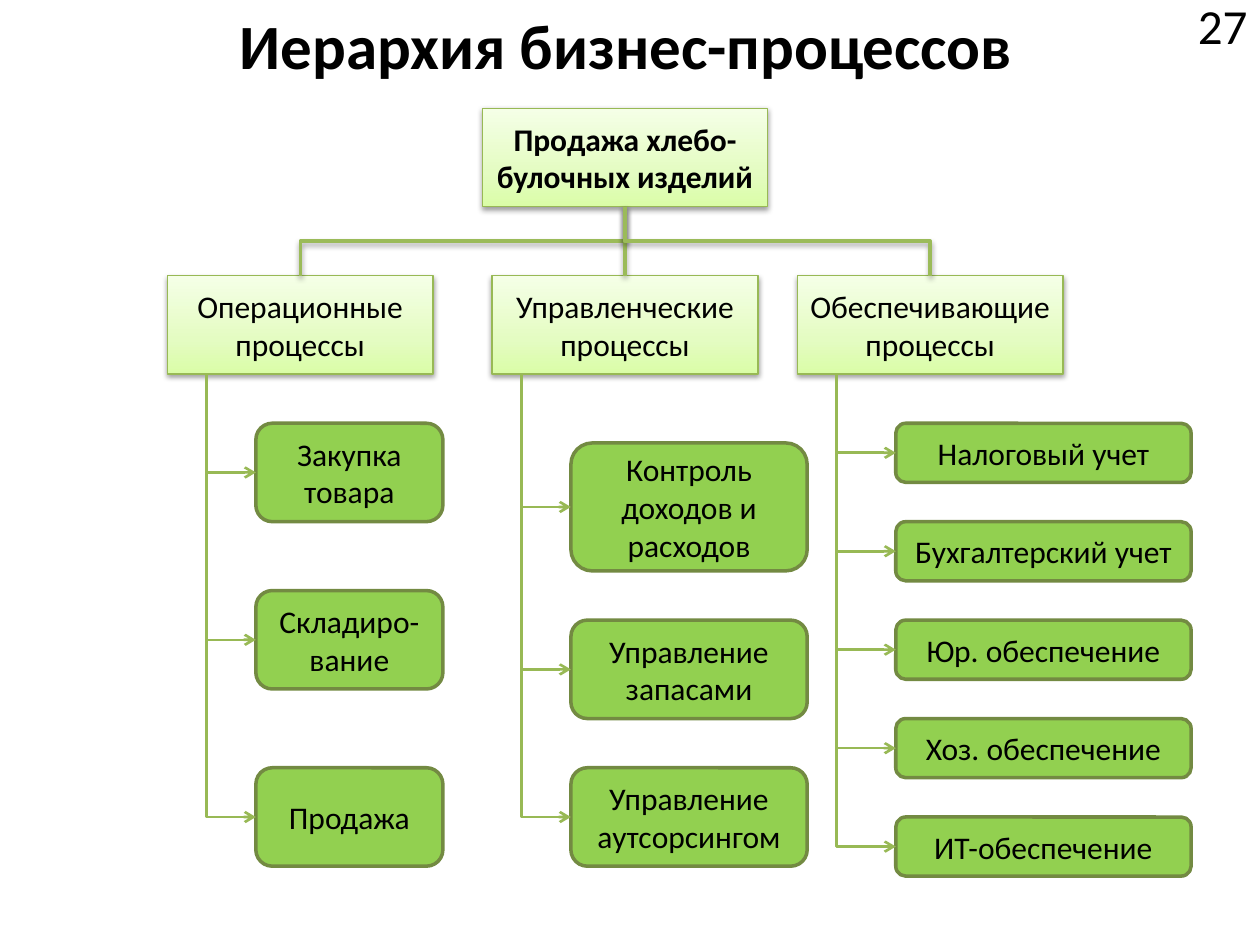
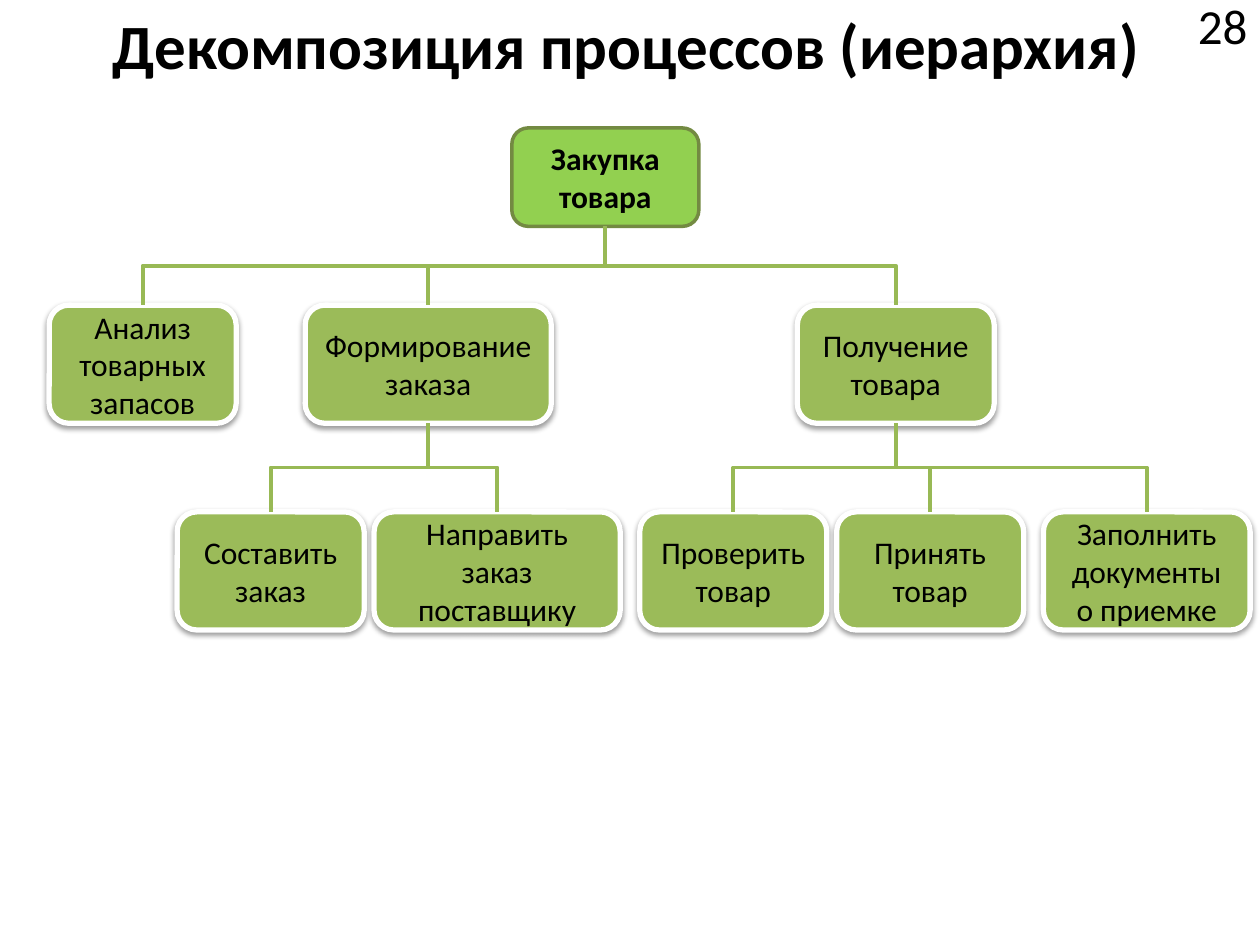
from copy import deepcopy
from typing import NamedTuple

from lxml.etree import SubElement
from pptx import Presentation
from pptx.dml.color import RGBColor
from pptx.enum.shapes import MSO_CONNECTOR as CONNECTOR, MSO_SHAPE as SHAPE
from pptx.enum.text import MSO_ANCHOR as ANCHOR, PP_ALIGN as ALIGN
from pptx.oxml.ns import qn
from pptx.util import Emu, Pt

PX_PER_INCH = 128
FONT = "Calibri"
COLORS = {
    "text": "000000",
    "white": "FFFFFF",
    "lime": "92D050",
    "lime_edge": "738A42",
    "olive": "9BBB59",
    "olive_edge": "98B955",
    "pale_bottom": "DAFDA7",
    "pale_middle": "E4FCC2",
    "pale_top": "F5FFE7",
}
PALE_STOPS = [(0, "pale_bottom"), (0.35, "pale_middle"), (1, "pale_top")]


class BoxStyle(NamedTuple):
    preset: SHAPE
    fill: str | None  # None stands for the pale gradient
    edge: str
    edge_width: float
    shadow: bool


GROUP = BoxStyle(SHAPE.RECTANGLE, None, "olive_edge", 0.75, True)
PROCESS = BoxStyle(SHAPE.ROUNDED_RECTANGLE, "lime", "lime_edge", 2, False)
STEP = BoxStyle(SHAPE.ROUNDED_RECTANGLE, "olive", "white", 3, True)


class Rect(NamedTuple):
    x: int
    y: int
    width: int
    height: int

    @property
    def center(self):
        return self.x + self.width / 2

    @property
    def middle(self):
        return self.y + self.height / 2

    @property
    def bottom(self):
        return self.y + self.height


def px(length):
    return Emu(round(length * 914400 / PX_PER_INCH))


def color(name):
    return RGBColor.from_string(COLORS[name])


def add_shadow(effects):
    shadow = SubElement(effects, qn("a:outerShdw"), blurRad="40000", dist="20000",
                        dir="5400000", rotWithShape="0")
    black = SubElement(shadow, qn("a:srgbClr"), val=COLORS["text"])
    SubElement(black, qn("a:alpha"), val="38000")


class Deck:
    """Holds the presentation, its style and the slide being drawn."""

    def __init__(self):
        self.presentation = Presentation()
        self.presentation.slide_width = px(1280)
        self.presentation.slide_height = px(960)
        self.slide = None

    def start_slide(self, title, number):
        self.slide = self.presentation.slides.add_slide(self.presentation.slide_layouts[6])
        self.text(title, Rect(60, 0, 1152, 120), 36, bold=True)
        self.text(str(number), Rect(1150, 0, 130, 50), 28, ALIGN.RIGHT, ANCHOR.MIDDLE)

    def fill_frame(self, frame, text, size, align, anchor, bold):
        frame.word_wrap = True
        frame.vertical_anchor = anchor
        frame.text = text
        for paragraph in frame.paragraphs:
            paragraph.alignment = align
            font = paragraph.font
            font.name, font.size, font.bold = FONT, Pt(size), bold
            font.color.rgb = color("text")

    def text(self, text, rect, size, align=ALIGN.CENTER, anchor=ANCHOR.TOP, bold=False):
        box = self.slide.shapes.add_textbox(*map(px, rect))
        self.fill_frame(box.text_frame, text, size, align, anchor, bold)

    def box(self, style, text, x, y, width, height, bold=False):
        rect = Rect(x, y, width, height)
        shape = self.slide.shapes.add_shape(style.preset, *map(px, rect))
        if style.fill:
            shape.fill.solid()
            shape.fill.fore_color.rgb = color(style.fill)
        else:
            self.pale_gradient(shape)
        shape.line.color.rgb = color(style.edge)
        shape.line.width = Pt(style.edge_width)
        shape.shadow.inherit = False
        if style.shadow:
            add_shadow(shape._element.spPr.find(qn("a:effectLst")))
        self.fill_frame(shape.text_frame, text, 18, ALIGN.CENTER, ANCHOR.MIDDLE, bold)
        return rect

    def pale_gradient(self, shape):
        shape.fill.gradient()
        shape.fill.gradient_angle = 90
        stop_list = shape._element.spPr.find(".//" + qn("a:gsLst"))
        stop_list.append(deepcopy(stop_list[0]))
        for stop, (position, name) in zip(shape.fill.gradient_stops, PALE_STOPS):
            stop.position = position
            stop.color.rgb = color(name)

    def line(self, kind, start, end, name, width, shadow=False):
        connector = self.slide.shapes.add_connector(kind, *map(px, start + end))
        connector.line.color.rgb = color(name)
        connector.line.width = Pt(width)
        effects = SubElement(connector._element.spPr, qn("a:effectLst"))
        if shadow:
            add_shadow(effects)
        return connector

    def elbow(self, start, end, name, width, shadow=False):
        """Bent connector that leaves start downwards: an elbow turned a quarter."""
        (x1, y1), (x2, y2) = start, end
        center, middle = (x1 + x2) / 2, (y1 + y2) / 2
        half_length, half_breadth = (y2 - y1) / 2, abs(x2 - x1) / 2
        side = 1 if x2 < x1 else -1
        connector = self.line(
            CONNECTOR.ELBOW,
            (center - side * half_length, middle - half_breadth),
            (center + side * half_length, middle + half_breadth),
            name, width, shadow)
        properties = connector._element.spPr
        properties.find(qn("a:xfrm")).set("rot", str(side * 90 % 360 * 60000))
        return connector

    def branch(self, parent, child, name, width, shadow=False):
        start, end = (parent.center, parent.bottom), (child.center, child.y)
        if parent.center == child.center:
            self.line(CONNECTOR.STRAIGHT, start, end, name, width, shadow)
        else:
            self.elbow(start, end, name, width, shadow)

    def arrow(self, trunk, parent, child):
        """Arrow down the trunk and then right into the child's left side."""
        connector = self.elbow((trunk, parent.bottom), (child.x, child.middle),
                               "olive_edge", 1.5)
        properties = connector._element.spPr
        properties.find(qn("a:prstGeom")).set("prst", "bentConnector2")
        SubElement(properties.find(qn("a:ln")), qn("a:tailEnd"), type="arrow")


def draw_process_hierarchy(deck):
    deck.start_slide("Иерархия бизнес-процессов", 27)
    root = deck.box(GROUP, "Продажа хлебо-булочных изделий", 490, 110, 290, 100, bold=True)
    # group text, group x, trunk x, process x, process width, [(text, y, height)]
    columns = [
        ("Операционные процессы", 170, 210, 260, 190,
         [("Закупка товара", 430, 100), ("Складиро-вание", 600, 100), ("Продажа", 780, 100)]),
        ("Управленческие процессы", 500, 530, 580, 240,
         [("Контроль доходов и расходов", 450, 130), ("Управление запасами", 630, 100),
          ("Управление аутсорсингом", 780, 100)]),
        ("Обеспечивающие\nпроцессы", 810, 850, 910, 300,
         [(text, 430 + 100 * row, 60) for row, text in enumerate(
             ["Налоговый учет", "Бухгалтерский учет", "Юр. обеспечение",
              "Хоз. обеспечение", "ИТ-обеспечение"])]),
    ]
    groups = [deck.box(GROUP, column[0], column[1], 280, 270, 100) for column in columns]
    for group in groups:
        deck.branch(root, group, "olive", 2, shadow=True)
    for group, (_, _, trunk, x, width, processes) in zip(groups, columns):
        for text, y, height in processes:
            process = deck.box(PROCESS, text, x, y, width, height)
            deck.arrow(trunk, group, process)


def draw_decomposition(deck):
    deck.start_slide("Декомпозиция процессов (иерархия)", 28)
    root = deck.box(PROCESS, "Закупка товара", 520, 130, 190, 100, bold=True)
    # stage text, x, width, [(step text, x, width)]
    stages = [
        ("Анализ товарных запасов", 50, 190, []),
        ("Формирование заказа", 310, 250,
         [("Составить заказ", 180, 190), ("Направить заказ поставщику", 380, 250)]),
        ("Получение товара", 810, 200,
         [("Проверить товар", 650, 190), ("Принять товар", 850, 190),
          ("Заполнить документы о приемке", 1060, 210)]),
    ]
    for text, x, width, steps in stages:
        stage = deck.box(STEP, text, x, 310, width, 120)
        deck.branch(root, stage, "olive_edge", 2.25)
        for step_text, step_x, step_width in steps:
            step = deck.box(STEP, step_text, step_x, 520, step_width, 120)
            deck.branch(stage, step, "olive_edge", 2.25)


def main():
    deck = Deck()
    draw_process_hierarchy(deck)
    draw_decomposition(deck)
    deck.presentation.save("out.pptx")


if __name__ == "__main__":
    main()
